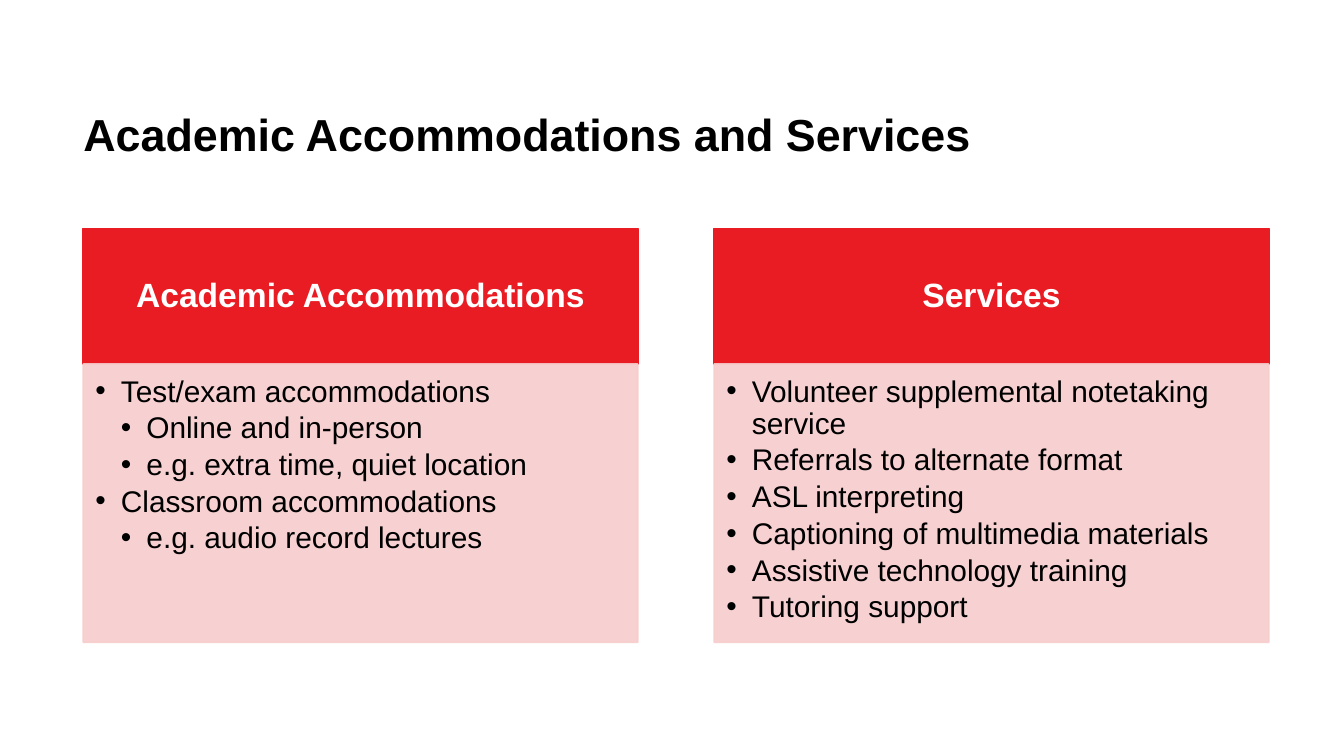
from dataclasses import dataclass

from lxml.etree import SubElement
from pptx import Presentation
from pptx.dml.color import RGBColor
from pptx.enum.shapes import MSO_SHAPE
from pptx.enum.text import MSO_ANCHOR, PP_ALIGN
from pptx.oxml.ns import qn
from pptx.util import Inches, Pt


@dataclass(frozen=True)
class Theme:
    font: str = "Arial"
    ink: str = "000000"
    light: str = "FFFFFF"
    red: str = "E91C24"
    pink: str = "F7CDCD"
    title_size: int = 24
    heading_size: int = 18
    body_size: int = 16
    line_spacing: float = 0.9
    item_gap: float = 2.4
    indent: float = 0.19


THEME = Theme()
WIDTH = 10
HEIGHT = WIDTH * 9 / 16

# Two columns share the content width; the heading takes the upper part
LEFT, CONTENT_WIDTH = 0.62, 8.82
GUTTER = 0.57
COLUMN_WIDTH = (CONTENT_WIDTH - GUTTER) / 2
TITLE_BOX = (LEFT, 0.84, CONTENT_WIDTH, 0.79)
COLUMNS_TOP, COLUMNS_HEIGHT = 1.7, 3.08
HEADING_SHARE = 1.01 / COLUMNS_HEIGHT

# Each item is (level, text)
COLUMNS = [
    ("Academic Accommodations", [
        (0, "Test/exam accommodations"),
        (1, "Online and in-person"),
        (1, "e.g. extra time, quiet location"),
        (0, "Classroom accommodations"),
        (1, "e.g. audio record lectures"),
    ]),
    ("Services", [
        (0, "Volunteer supplemental notetaking service"),
        (0, "Referrals to alternate format"),
        (0, "ASL interpreting"),
        (0, "Captioning of multimedia materials"),
        (0, "Assistive technology training"),
        (0, "Tutoring support"),
    ]),
]


def add_bullet(paragraph, level):
    paragraph.level = level
    properties = paragraph._p.get_or_add_pPr()
    properties.set("marL", str(Inches(THEME.indent * (level + 1))))
    properties.set("indent", str(-Inches(THEME.indent)))
    SubElement(properties, qn("a:buFont")).set("typeface", THEME.font)
    SubElement(properties, qn("a:buChar")).set("char", "•")


def write(holder, items, *, size, color=THEME.ink, bold=False, bullets=False,
          align=PP_ALIGN.LEFT, anchor=MSO_ANCHOR.TOP, insets=(0, 0, 0, 0), gap=0):
    """Fill a shape or text box with (level, text) items."""
    frame = holder.text_frame
    frame.word_wrap = True
    frame.vertical_anchor = anchor
    (frame.margin_left, frame.margin_top,
     frame.margin_right, frame.margin_bottom) = map(Inches, insets)
    for index, (level, text) in enumerate(items):
        paragraph = frame.add_paragraph() if index else frame.paragraphs[0]
        if bullets:
            add_bullet(paragraph, level)
        paragraph.alignment = align
        paragraph.line_spacing = THEME.line_spacing
        paragraph.space_after = Pt(gap)
        run = paragraph.add_run()
        run.text = text
        run.font.name = THEME.font
        run.font.size = Pt(size)
        run.font.bold = bold
        run.font.color.rgb = RGBColor.from_string(color)


def add_panel(slide, box, color, opacity=100):
    panel = slide.shapes.add_shape(MSO_SHAPE.RECTANGLE, *map(Inches, box))
    panel.shadow.inherit = False
    panel.line.width = Pt(1)
    for paint in (panel.fill, panel.line.fill):
        paint.solid()
        paint.fore_color.rgb = RGBColor.from_string(color)
    if opacity < 100:
        for tint in panel._element.spPr.iter(qn("a:srgbClr")):
            SubElement(tint, qn("a:alpha")).set("val", str(opacity * 1000))
    return panel


def add_title(slide, box, text):
    title = slide.shapes.add_textbox(*map(Inches, box))
    write(title, [(0, text)], size=THEME.title_size, bold=True)


def add_column(slide, box, heading, items):
    left, top, width, height = box
    heading_height = height * HEADING_SHARE

    # Heading band
    band = add_panel(slide, (left, top, width, heading_height), THEME.red)
    write(band, [(0, heading)], size=THEME.heading_size, color=THEME.light,
          bold=True, align=PP_ALIGN.CENTER, anchor=MSO_ANCHOR.MIDDLE,
          insets=(0.14, 0.08, 0.14, 0.08))

    # Bulleted body
    body = add_panel(slide, (left, top + heading_height, width,
                             height - heading_height), THEME.pink, opacity=90)
    write(body, items, size=THEME.body_size, bullets=True,
          insets=(0.09, 0.09, 0.12, 0.14), gap=THEME.item_gap)


def main():
    deck = Presentation()
    deck.slide_width, deck.slide_height = Inches(WIDTH), Inches(HEIGHT)
    slide = deck.slides.add_slide(deck.slide_layouts[6])

    add_title(slide, TITLE_BOX, "Academic Accommodations and Services")
    for index, (heading, items) in enumerate(COLUMNS):
        left = LEFT + index * (COLUMN_WIDTH + GUTTER)
        add_column(slide, (left, COLUMNS_TOP, COLUMN_WIDTH, COLUMNS_HEIGHT),
                   heading, items)

    deck.save("out.pptx")


if __name__ == "__main__":
    main()
